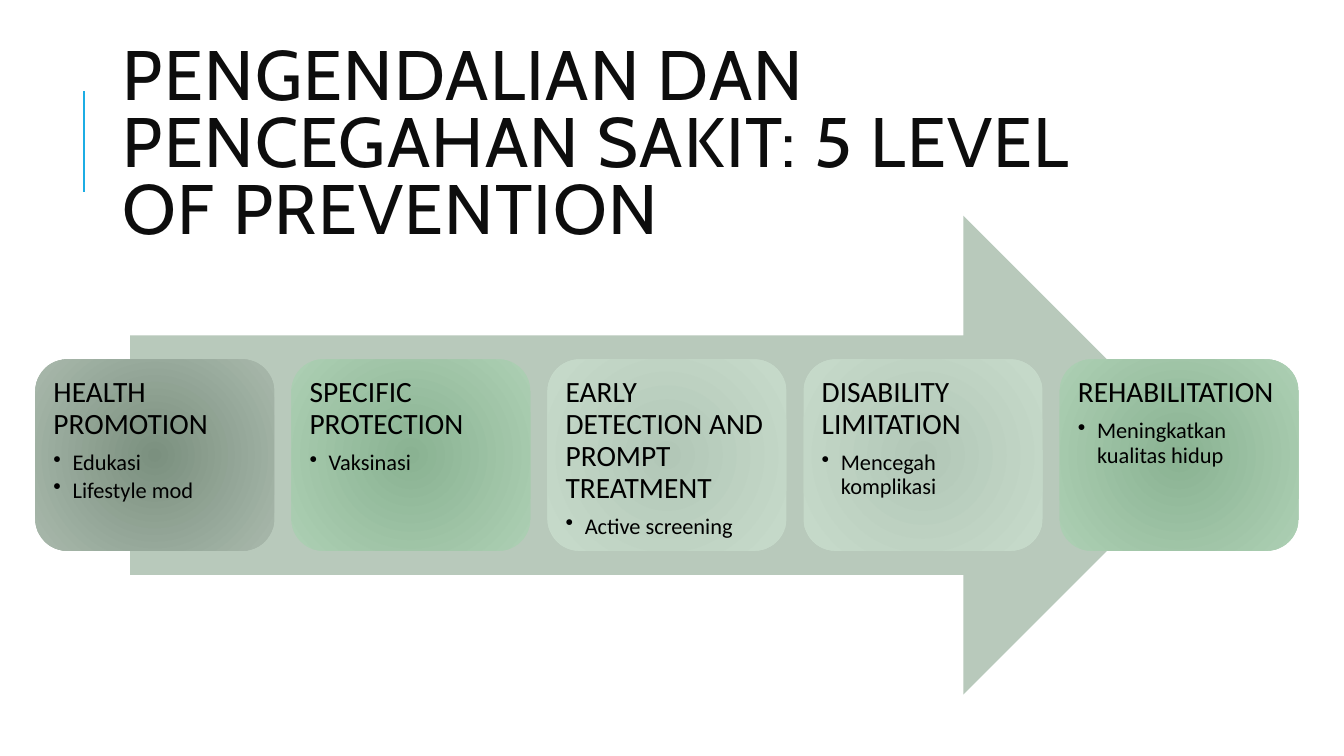
from lxml.etree import SubElement
from pptx import Presentation
from pptx.dml.color import RGBColor
from pptx.enum.shapes import MSO_CONNECTOR as Connector, MSO_SHAPE as Shape
from pptx.enum.text import MSO_ANCHOR as Anchor, PP_ALIGN as Align
from pptx.oxml.ns import qn
from pptx.util import Inches, Pt

BLACK = RGBColor(0x00, 0x00, 0x00)
INK = RGBColor(0x0D, 0x0D, 0x0D)
ACCENT = RGBColor(0x1C, 0xAD, 0xE4)
ARROW = RGBColor(0xB8, 0xC9, 0xBB)
# Gradients run from the centre to the edge.
GREY = (RGBColor(0x7B, 0x90, 0x7F), RGBColor(0xA9, 0xB9, 0xAC))
GREEN = (RGBColor(0x8A, 0xB2, 0x92), RGBColor(0xAD, 0xD0, 0xB4))
PALE = (RGBColor(0xB2, 0xC7, 0xB7), RGBColor(0xC7, 0xDB, 0xCB))

TITLE = "PENGENDALIAN DAN PENCEGAHAN SAKIT: 5 LEVEL OF PREVENTION"
LEVELS = [
    ("HEALTH PROMOTION", ["Edukasi", "Lifestyle mod"], GREY),
    ("SPECIFIC PROTECTION", ["Vaksinasi"], GREEN),
    ("EARLY DETECTION AND PROMPT TREATMENT", ["Active screening"], PALE),
    ("DISABILITY LIMITATION", ["Mencegah komplikasi"], PALE),
    ("REHABILITATION", ["Meningkatkan kualitas hidup"], GREEN),
]

SLIDE_WIDTH, SLIDE_HEIGHT = 13.33, 7.5
TITLE_BOX = (1.12, 0.64, 10.63, 1.64)
RULE_X, RULE_TOP, RULE_BOTTOM = 0.83, 0.9, 1.9
ARROW_BOX = (1.29, 2.14, 10.64, 4.75)
CARD_LEFT, CARD_WIDTH, CARD_GAP = 0.35, 2.37, 0.17
CARD_HEIGHT = ARROW_BOX[3] * 0.4
CARD_TOP = ARROW_BOX[1] + (ARROW_BOX[3] - CARD_HEIGHT) / 2
CARD_INSET = 0.09
BULLET_INDENT = 0.19

TITLE_FONT = {"name": "Cabin", "size": Pt(50)}
HEADING_FONT = {"name": "Calibri", "size": Pt(21)}
BULLET_FONT = {"name": "Calibri", "size": Pt(16)}
HEADING_SPACING = {"line_spacing": 0.9, "space_after": Pt(7.35)}
BULLET_SPACING = {"line_spacing": 0.9, "space_after": Pt(2.4), "level": 1}


def set_attributes(target, values):
    for name, value in values.items():
        setattr(target, name, value)


def add_text_box(slide, box, inset, anchor):
    frame = slide.shapes.add_textbox(*map(Inches, box)).text_frame
    set_attributes(frame, {"word_wrap": True, "vertical_anchor": anchor})
    for side in ("left", "top", "right", "bottom"):
        setattr(frame, f"margin_{side}", Inches(inset))
    return frame


def write(paragraph, text, font, color, spacing):
    run = paragraph.add_run()
    run.text = text
    set_attributes(run.font, font)
    run.font.color.rgb = color
    set_attributes(paragraph, {"alignment": Align.LEFT, **spacing})
    return run


def add_bullet(paragraph):
    properties = paragraph._p.get_or_add_pPr()
    properties.set("marL", str(Inches(BULLET_INDENT)))
    properties.set("indent", str(-Inches(BULLET_INDENT)))
    SubElement(properties, qn("a:buChar"), char="•")


def add_plain_shape(slide, kind, box):
    shape = slide.shapes.add_shape(kind, *map(Inches, box))
    shape.shadow.inherit = False
    shape.line.fill.background()
    return shape


def fill_radially(shape, colors):
    shape.fill.gradient()
    for stop, color in zip(shape.fill.gradient_stops, colors):
        stop.color.rgb = color
    gradient = shape._element.spPr.find(qn("a:gradFill"))
    gradient.remove(gradient.find(qn("a:lin")))
    circle = SubElement(gradient, qn("a:path"), path="circle")
    SubElement(circle, qn("a:fillToRect"), dict.fromkeys("ltrb", "100000"))


def add_title(slide):
    rule = slide.shapes.add_connector(
        Connector.STRAIGHT, *map(Inches, (RULE_X, RULE_BOTTOM, RULE_X, RULE_TOP)))
    rule.line.color.rgb = ACCENT
    rule.line.width = Pt(1.5)
    SubElement(rule._element.spPr, qn("a:effectLst"))
    frame = add_text_box(slide, TITLE_BOX, 0.1, Anchor.MIDDLE)
    run = write(frame.paragraphs[0], TITLE, TITLE_FONT, INK, {"line_spacing": 0.8})
    run.font._element.set("spc", "100")


def add_level(slide, index, heading, bullets, colors):
    left = CARD_LEFT + index * (CARD_WIDTH + CARD_GAP)
    card = add_plain_shape(
        slide, Shape.ROUNDED_RECTANGLE, (left, CARD_TOP, CARD_WIDTH, CARD_HEIGHT))
    fill_radially(card, colors)
    text_box = (left + CARD_INSET, CARD_TOP + CARD_INSET,
                CARD_WIDTH - 2 * CARD_INSET, CARD_HEIGHT - 2 * CARD_INSET)
    frame = add_text_box(slide, text_box, CARD_INSET, Anchor.TOP)
    write(frame.paragraphs[0], heading, HEADING_FONT, BLACK, HEADING_SPACING)
    for bullet in bullets:
        paragraph = frame.add_paragraph()
        write(paragraph, bullet, BULLET_FONT, BLACK, BULLET_SPACING)
        add_bullet(paragraph)


def main():
    presentation = Presentation()
    presentation.slide_width = Inches(SLIDE_WIDTH)
    presentation.slide_height = Inches(SLIDE_HEIGHT)
    slide = presentation.slides.add_slide(presentation.slide_layouts[6])
    add_title(slide)
    arrow = add_plain_shape(slide, Shape.RIGHT_ARROW, ARROW_BOX)
    arrow.fill.solid()
    arrow.fill.fore_color.rgb = ARROW
    for index, level in enumerate(LEVELS):
        add_level(slide, index, *level)
    presentation.save("out.pptx")


if __name__ == "__main__":
    main()
